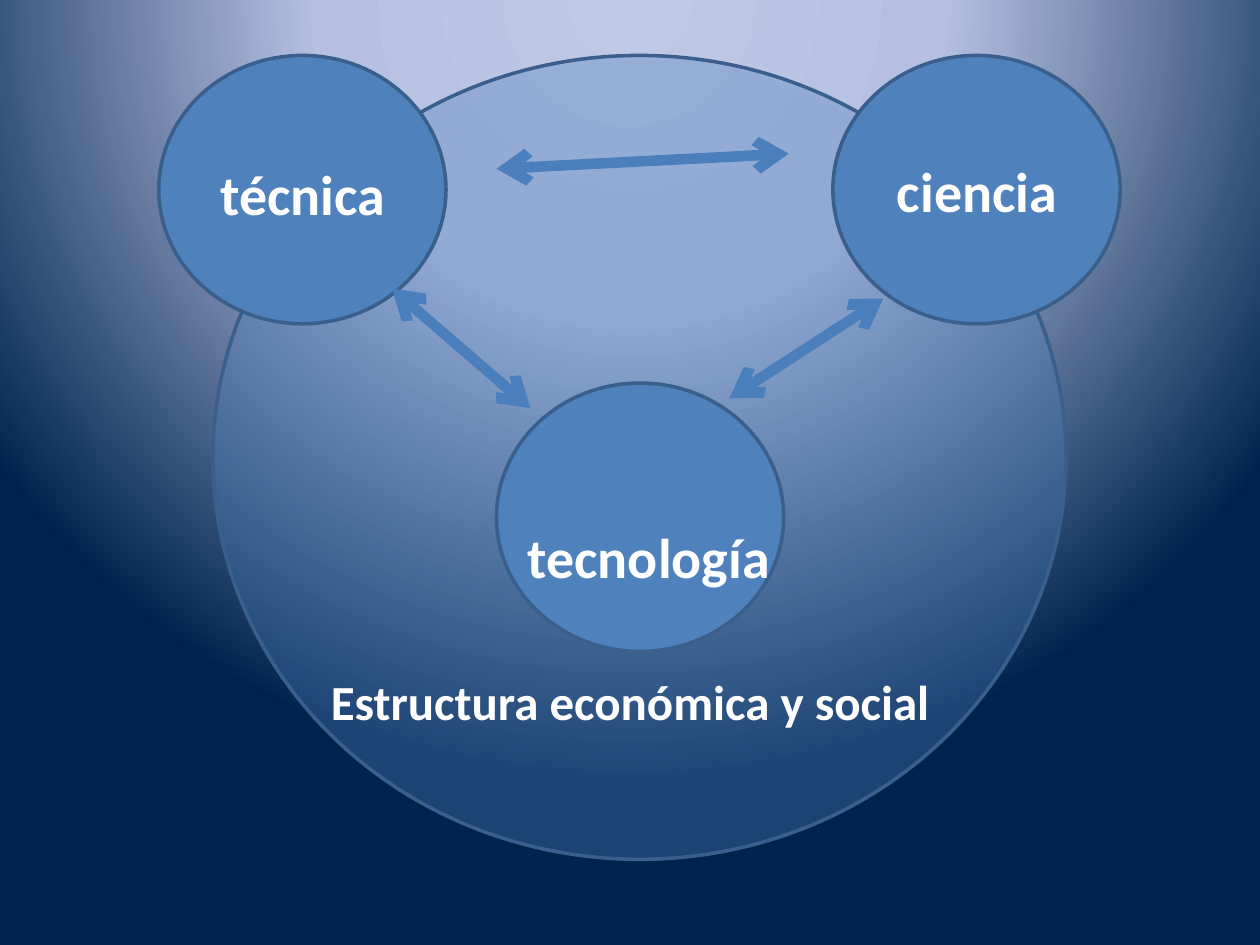
from pptx import Presentation
from pptx.dml.color import RGBColor
from pptx.enum.shapes import MSO_CONNECTOR, MSO_SHAPE
from pptx.enum.text import MSO_AUTO_SIZE, PP_ALIGN
from pptx.oxml import parse_xml
from pptx.oxml.ns import nsdecls, qn
from pptx.oxml.xmlchemy import OxmlElement
from pptx.util import Inches, Pt

ELLIPSE = MSO_SHAPE.OVAL
STRAIGHT = MSO_CONNECTOR.STRAIGHT
CENTER = PP_ALIGN.CENTER
GROW = MSO_AUTO_SIZE.SHAPE_TO_FIT_TEXT

BLUE = RGBColor(0x4F, 0x81, 0xBD)
OUTLINE = RGBColor(0x3A, 0x5F, 0x8C)
ARROW = RGBColor(0x4B, 0x7E, 0xBC)
WHITE = RGBColor(0xFF, 0xFF, 0xFF)
GLOW = ((0, RGBColor(0xBF, 0xC9, 0xE5)),
        (40, RGBColor(0xB5, 0xC0, 0xE0)),
        (100, RGBColor(0x00, 0x23, 0x4D)))

CIRCLE_W, CIRCLE_H = 2.28, 2.13


class Diagram:
    font = "Calibri"

    def __init__(self, slide):
        self.slide = slide

    def background(self, stops):
        """Radial gradient centred above the top edge."""
        self.slide.background.fill.gradient()
        old = next(self.slide._element.iter(qn("a:gradFill")))
        gs = "".join(
            f'<a:gs pos="{pos * 1000}"><a:srgbClr val="{color}"/></a:gs>'
            for pos, color in stops)
        old.getparent().replace(old, parse_xml(
            f'<a:gradFill {nsdecls("a")} rotWithShape="1"><a:gsLst>{gs}</a:gsLst>'
            '<a:path path="circle"><a:fillToRect l="50000" t="-80000" '
            'r="50000" b="180000"/></a:path></a:gradFill>'))

    def ellipse(self, x, y, w, h, opacity=100):
        sp = self.slide.shapes.add_shape(
            ELLIPSE, Inches(x), Inches(y), Inches(w), Inches(h))
        sp.shadow.inherit = False
        sp.fill.solid()
        sp.fill.fore_color.rgb = BLUE
        if opacity < 100:
            alpha = OxmlElement("a:alpha")
            alpha.set("val", str(opacity * 1000))
            sp._element.spPr.find(qn("a:solidFill"))[0].append(alpha)
        sp.line.color.rgb = OUTLINE
        sp.line.width = Pt(2)

    def double_arrow(self, x1, y1, x2, y2):
        cxn = self.slide.shapes.add_connector(
            STRAIGHT, Inches(x1), Inches(y1), Inches(x2), Inches(y2))
        cxn.line.color.rgb = ARROW
        cxn.line.width = Pt(6)
        ln = cxn.line._get_or_add_ln()
        for tag in ("a:headEnd", "a:tailEnd"):
            end = OxmlElement(tag)
            end.set("type", "arrow")
            ln.append(end)
        cxn._element.spPr.append(OxmlElement("a:effectLst"))

    def label(self, text, x, y, w, h, size):
        tf = self.slide.shapes.add_textbox(
            Inches(x), Inches(y), Inches(w), Inches(h)).text_frame
        tf.word_wrap = True
        tf.auto_size = GROW
        p = tf.paragraphs[0]
        p.alignment = CENTER
        r = p.add_run()
        r.text = text
        r.font.name = self.font
        r.font.size = Pt(size)
        r.font.bold = True
        r.font.color.rgb = WHITE


def main():
    prs = Presentation()
    prs.slide_width, prs.slide_height = Inches(10), Inches(7.5)
    d = Diagram(prs.slides.add_slide(prs.slide_layouts[6]))
    d.background(GLOW)

    d.ellipse(1.69, 0.44, 6.77, 6.38, opacity=35)
    for x, y in ((1.26, 0.44), (6.61, 0.44), (3.94, 3.04)):
        d.ellipse(x, y, CIRCLE_W, CIRCLE_H)

    for ends in ((3.11, 2.29, 4.21, 3.24),
                 (3.94, 1.34, 6.26, 1.22),
                 (5.79, 3.16, 7.01, 2.37)):
        d.double_arrow(*ends)

    for text, x, y, w in (("técnica", 1.5, 1.22, 1.81),
                          ("ciencia", 6.85, 1.19, 1.81),
                          ("tecnología", 3.9, 4.1, 2.5)):
        d.label(text, x, y, w, 0.64, 32)
    d.label("Estructura económica y social", 2.4, 5.28, 5.2, 0.57, 28)

    prs.save("out.pptx")


if __name__ == "__main__":
    main()
